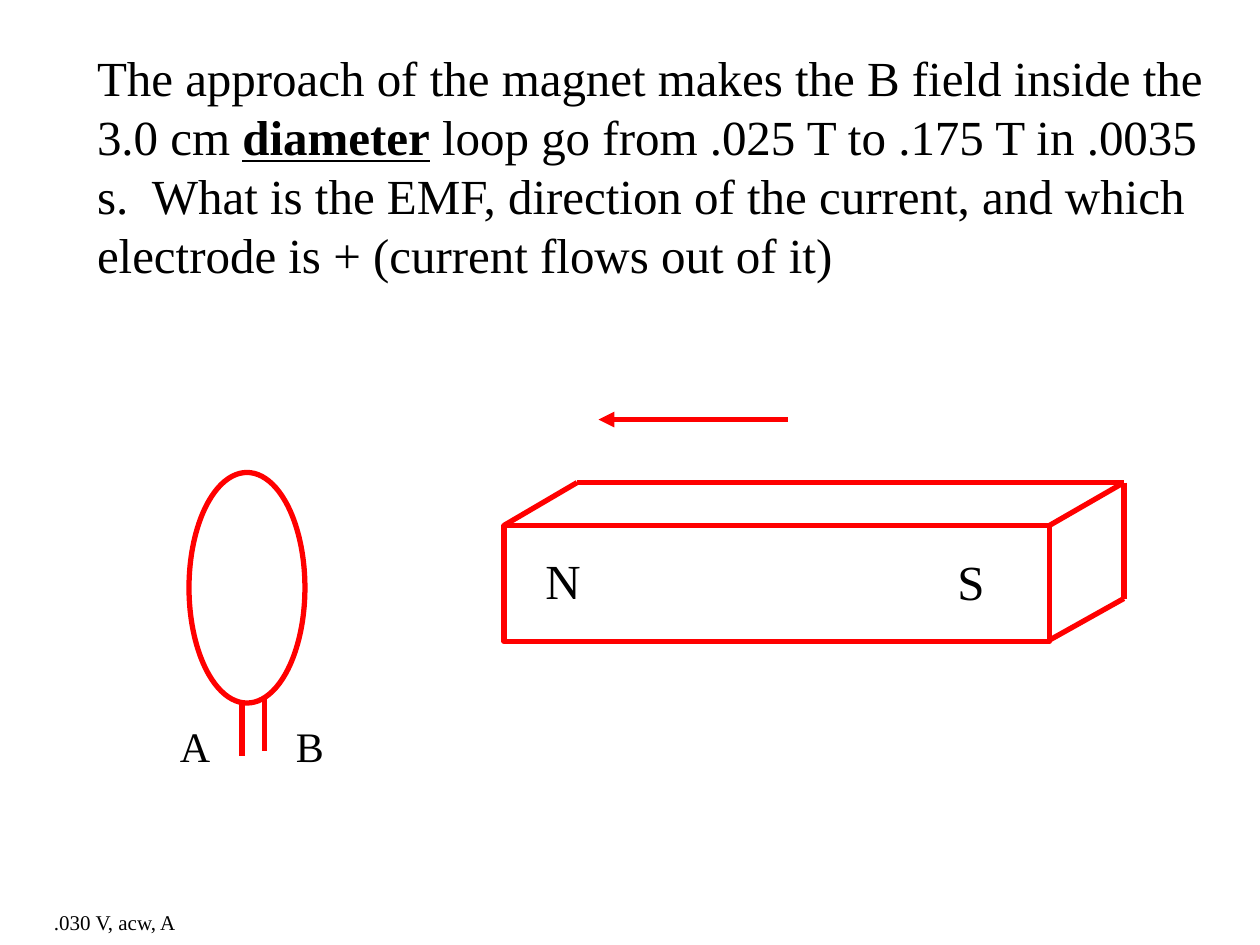
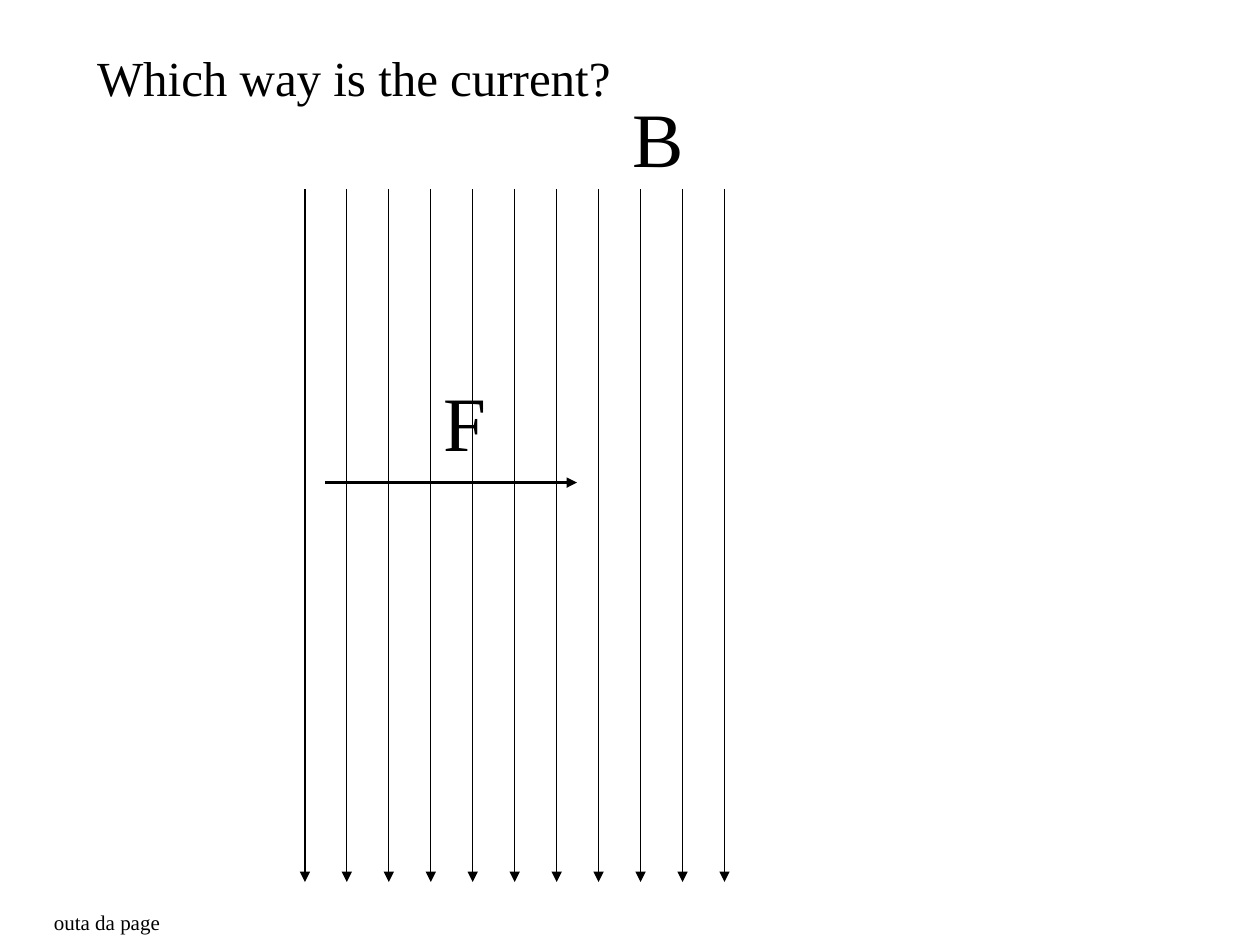
from dataclasses import dataclass

from lxml import etree
from pptx import Presentation
from pptx import util as u
from pptx.dml import color
from pptx.enum import shapes, text
from pptx.oxml import ns


@dataclass(frozen=True)
class Theme:
    font: str = "Times New Roman"
    ink: color.RGBColor = color.RGBColor(0, 0, 0)
    accent: color.RGBColor = color.RGBColor(255, 0, 0)
    answer: int = 12
    electrode: int = 24
    question: int = 28
    vector: int = 44
    thin: float = 0.75
    medium: float = 2
    thick: float = 3


def apply(target, formats):
    for name, value in formats.items():
        setattr(target, name, value)


class Deck:
    def __init__(self, theme):
        self.theme = theme
        self.presentation = Presentation()
        self.slide = None
        apply(self.presentation, {
            "slide_width": u.Inches(10), "slide_height": u.Inches(7.5)})

    def fill_text(self, shape, runs, size, wrap):
        frame = shape.text_frame
        apply(frame, {
            "word_wrap": wrap,
            "auto_size": text.MSO_AUTO_SIZE.SHAPE_TO_FIT_TEXT,
            "vertical_anchor": text.MSO_ANCHOR.TOP})
        paragraph = frame.paragraphs[0]
        paragraph.alignment = text.PP_ALIGN.LEFT
        for words, emphasis in runs:
            run = paragraph.add_run()
            run.text = words
            apply(run.font, {
                "name": self.theme.font, "size": u.Pt(size),
                "bold": emphasis, "underline": emphasis})
            run.font.color.rgb = self.theme.ink

    def question(self, runs, width, height, wrap):
        layout = self.presentation.slide_layouts.get_by_name("Title Only")
        self.slide = self.presentation.slides.add_slide(layout)
        title = self.slide.shapes.title
        apply(title, {
            "left": u.Inches(0.67), "top": u.Inches(0.33),
            "width": u.Inches(width), "height": u.Inches(height)})
        self.fill_text(title, runs, self.theme.question, wrap)

    def label(self, words, left, top, width, height, size):
        box = self.slide.shapes.add_textbox(
            u.Inches(left), u.Inches(top), u.Inches(width), u.Inches(height))
        self.fill_text(box, [(words, False)], size, False)

    def answer(self, words, width):
        self.label(words, 0.33, 7.17, width, 0.3, self.theme.answer)

    def outline(self, kind, left, top, width, height):
        shape = self.slide.shapes.add_shape(
            kind, u.Inches(left), u.Inches(top), u.Inches(width), u.Inches(height))
        shape.shadow.inherit = False
        shape.fill.background()
        shape.line.color.rgb = self.theme.accent
        shape.line.width = u.Pt(self.theme.thick)

    def line(self, start, end, ink, weight, arrow=False, group=None):
        parent = group or self.slide
        connector = parent.shapes.add_connector(
            shapes.MSO_CONNECTOR.STRAIGHT, *map(u.Inches, (*start, *end)))
        connector.line.color.rgb = ink
        connector.line.width = u.Pt(weight)
        properties = connector._element.spPr
        if arrow:
            outline = properties.find(ns.qn("a:ln"))
            etree.SubElement(outline, ns.qn("a:tailEnd"), type="triangle")
        etree.SubElement(properties, ns.qn("a:effectLst"))


def build_magnet_slide(deck):
    theme = deck.theme
    red = (theme.accent, theme.thick)
    deck.question([
        ("The approach of the magnet makes the B field inside the 3.0 cm ", False),
        ("diameter", True),
        (" loop go from .025 T to .175 T in .0035 s.  What is the EMF, direction "
         "of the current, and which electrode is + (current flows out of it)", False),
    ], 9, 1.97, True)
    deck.answer(".030 V, acw, A", 1.21)

    deck.outline(shapes.MSO_SHAPE.RECTANGLE, 4, 4.17, 4.33, 0.92)
    front_left, front_right, front_low = (4, 4.17), (8.33, 4.17), (8.33, 5.08)
    back_left, back_right, back_low = (4.58, 3.83), (8.92, 3.83), (8.92, 4.75)
    for start, end in (
            (front_left, back_left), (back_left, back_right),
            (front_right, back_right), (back_right, back_low),
            (front_low, back_low)):
        deck.line(start, end, *red)
    deck.label("N", 4.23, 4.32, 0.48, 0.57, theme.question)
    deck.label("S", 7.5, 4.33, 0.42, 0.57, theme.question)

    deck.outline(shapes.MSO_SHAPE.OVAL, 1.5, 3.75, 0.92, 1.83)
    deck.line((6.25, 3.33), (4.75, 3.33), *red, arrow=True)
    for left, top in ((1.92, 5.58), (2.1, 5.54)):
        deck.line((left, top), (left, top + 0.42), *red)
    for name, left, width in (("A", 1.33, 0.44), ("B", 2.25, 0.42)):
        deck.label(name, left, 5.67, width, 0.5, theme.electrode)


def build_current_slide(deck):
    theme = deck.theme
    deck.question([("Which way is the current?", False)], 4.28, 0.57, False)
    deck.answer("outa da page", 1.05)
    deck.label("F", 3.42, 2.92, 0.54, 0.83, theme.vector)
    deck.line((2.58, 3.83), (4.58, 3.83), theme.ink, theme.medium, arrow=True)
    deck.label("B", 4.92, 0.67, 0.61, 0.83, theme.vector)
    field = deck.slide.shapes.add_group_shape()
    first, last, count = 2.42, 5.75, 11
    for index in range(count):
        left = first + index * (last - first) / (count - 1)
        deck.line((left, 1.5), (left, 7), theme.ink, theme.thin, True, field)


def main():
    deck = Deck(Theme())
    build_magnet_slide(deck)
    build_current_slide(deck)
    deck.presentation.save("out.pptx")


if __name__ == "__main__":
    main()
